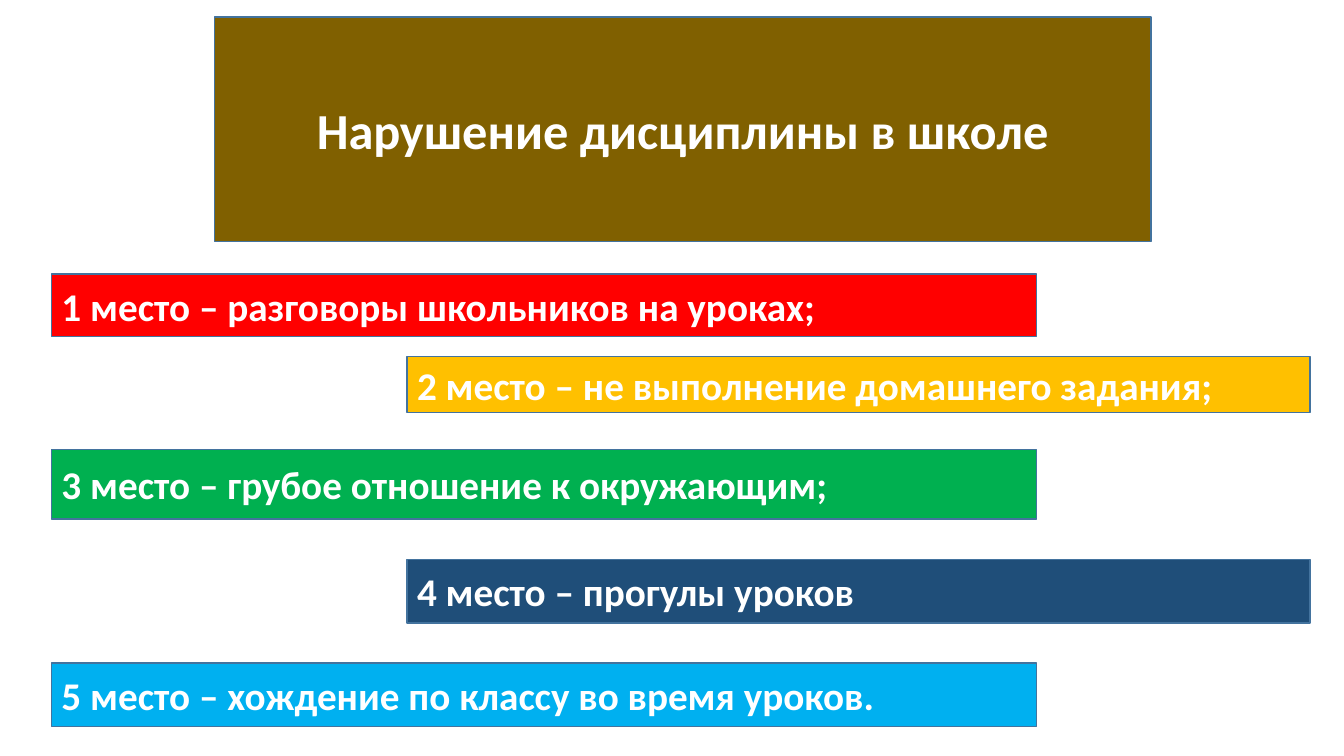
from lxml import etree
from pptx import Presentation
from pptx import util as u
from pptx.dml.color import RGBColor
from pptx.enum import shapes, text
from pptx.oxml.ns import qn

OUTLINE = "43739E"
WHITE = "FFFFFF"
LEFT_SIDE = (1.3, 24.82)
RIGHT_SIDE = (10.26, 22.76)
PLACES = [
    ("1 место – разговоры школьников на уроках;", "FF0000", 6.91, 1.57),
    ("2 место – не выполнение домашнего задания;", "FFC000", 8.99, 1.4),
    ("3 место – грубое отношение к окружающим;", "00B050", 11.33, 1.75),
    ("4 место – прогулы уроков", "1F4E79", 14.1, 1.6),
    ("5 место – хождение по классу во время уроков.", "00B0F0", 16.71, 1.6),
]


def rgb(value):
    return RGBColor.from_string(value)


def paint(figure, fill):
    figure.fill.solid()
    figure.fill.fore_color.rgb = rgb(fill)
    figure.line.color.rgb = rgb(OUTLINE)
    figure.line.width = u.Pt(1)
    figure.shadow.inherit = False


def write(figure, wording, size=28, align=text.PP_ALIGN.LEFT, color=WHITE):
    frame = figure.text_frame
    frame.word_wrap = True
    frame.auto_size = text.MSO_AUTO_SIZE.NONE
    frame.vertical_anchor = text.MSO_ANCHOR.MIDDLE
    paragraph = frame.paragraphs[0]
    paragraph.alignment = align
    run = paragraph.add_run()
    run.text = wording
    run.font.name = "Calibri"
    run.font.size = u.Pt(size)
    run.font.bold = True
    run.font.color.rgb = rgb(color)


def add_heading(slide, wording):
    heading = slide.shapes.title
    heading.left, heading.top = u.Cm(5.41), u.Cm(0.43)
    heading.width, heading.height = u.Cm(23.6), u.Cm(5.66)
    outline = etree.SubElement(heading.element.spPr, qn("a:prstGeom"), prst="ellipse")
    etree.SubElement(outline, qn("a:avLst"))
    paint(heading, "806000")
    write(heading, wording, size=36, align=text.PP_ALIGN.CENTER)


def add_place(slide, wording, fill, left, top, width, height):
    place = slide.shapes.add_shape(
        shapes.MSO_SHAPE.RECTANGLE, u.Cm(left), u.Cm(top), u.Cm(width), u.Cm(height))
    paint(place, fill)
    write(place, wording)


def main():
    deck = Presentation()
    deck.slide_width, deck.slide_height = u.Cm(33.87), u.Cm(19.05)
    slide = deck.slides.add_slide(deck.slide_layouts[5])
    add_heading(slide, "Нарушение дисциплины в школе")
    for index, (wording, fill, top, height) in enumerate(PLACES):
        left, width = RIGHT_SIDE if index % 2 else LEFT_SIDE
        add_place(slide, wording, fill, left, top, width, height)
    deck.save("out.pptx")


if __name__ == "__main__":
    main()
